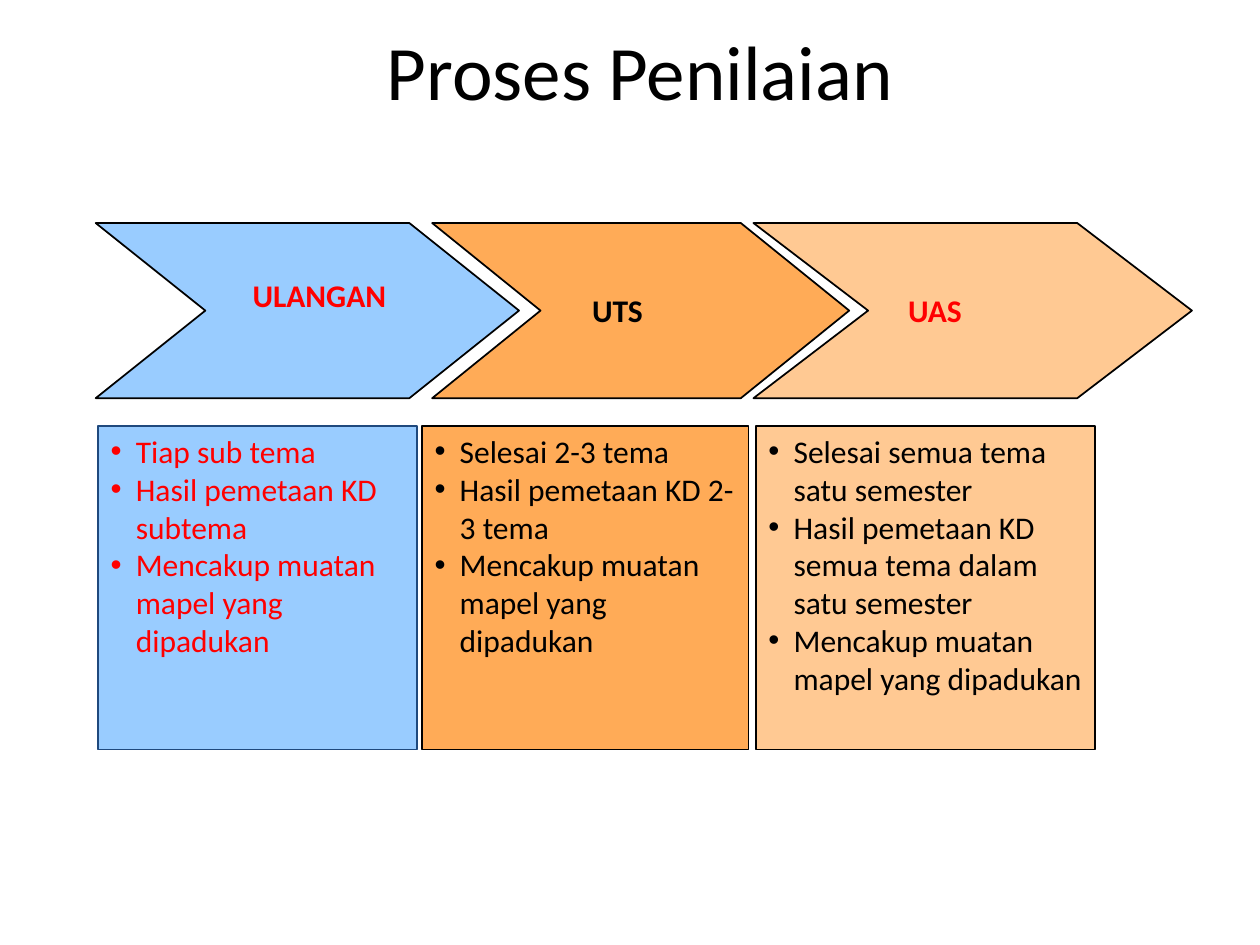
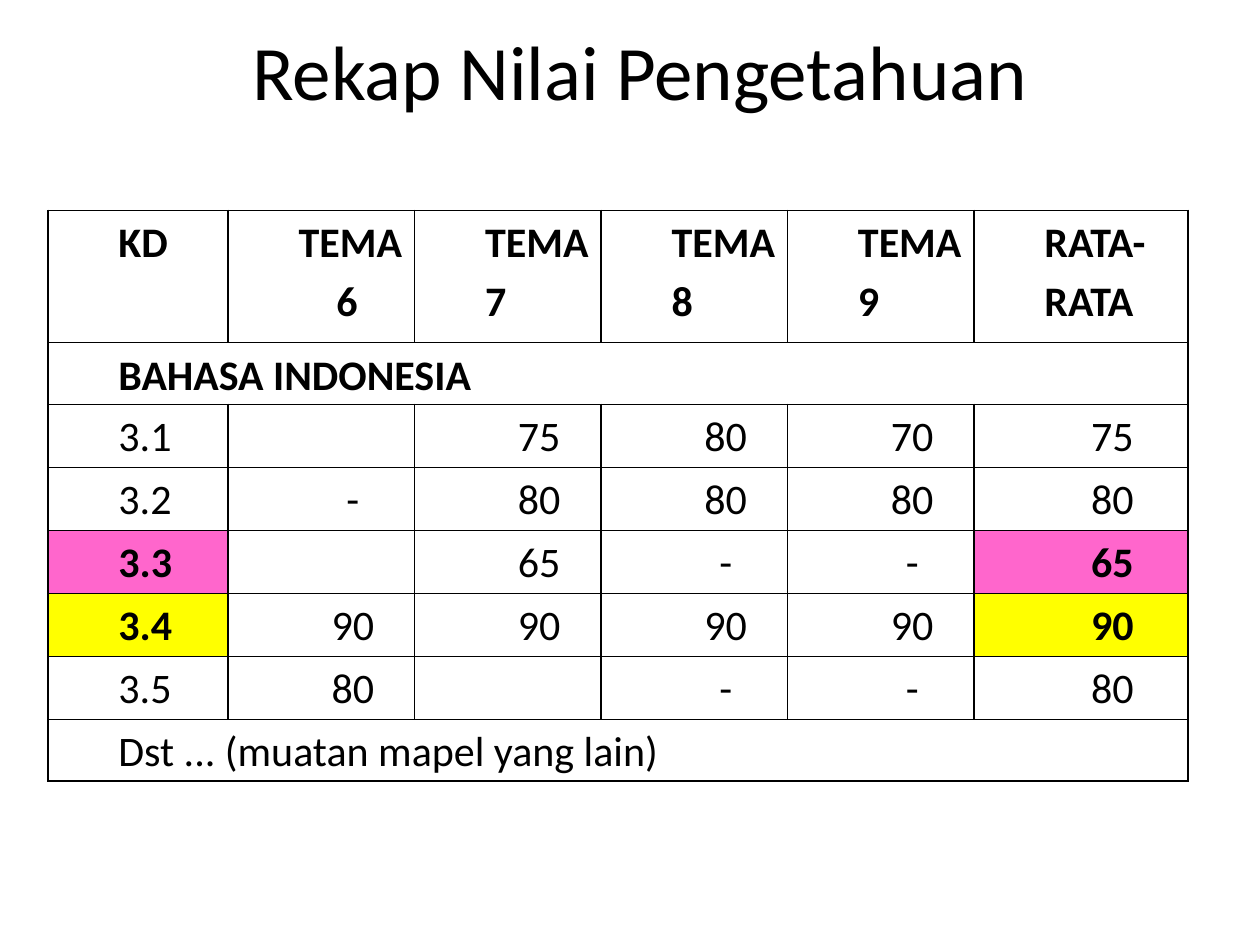
from dataclasses import dataclass
from typing import Any

from lxml.etree import SubElement
from pptx import Presentation
from pptx.dml.color import RGBColor
from pptx.enum.shapes import MSO_SHAPE as Preset
from pptx.enum.text import MSO_ANCHOR as Anchor, PP_ALIGN as Align
from pptx.oxml.ns import qn
from pptx.util import Inches, Pt

# Slide size and grid: 100 columns by 75 rows
WIDTH, HEIGHT = Inches(10), Inches(7.5)
GRID_COLUMNS, GRID_ROWS = 100, 75

# Colours
BLACK = RGBColor(0x00, 0x00, 0x00)
RED = RGBColor(0xFF, 0x00, 0x00)
NAVY = RGBColor(0x1F, 0x49, 0x7D)
BLUE = RGBColor(0x99, 0xCC, 0xFF)
ORANGE = RGBColor(0xFF, 0xAB, 0x57)
PEACH = RGBColor(0xFF, 0xC9, 0x93)
PINK = RGBColor(0xFF, 0x66, 0xCC)
YELLOW = RGBColor(0xFF, 0xFF, 0x00)

# Text formats
TITLE_FONT = {"name": "Calibri", "size": Pt(44), "bold": False}
BODY_FONT = {"name": "Calibri", "size": Pt(18), "bold": False}
LABEL_FONT = {**BODY_FONT, "bold": True}
CELL_FONT = {"name": "Calibri", "size": Pt(24), "bold": False}
HEAD_FONT = {**CELL_FONT, "bold": True}


def columns(count: float) -> int:
    return round(WIDTH * count / GRID_COLUMNS)


def rows(count: float) -> int:
    return round(HEIGHT * count / GRID_ROWS)


@dataclass(frozen=True)
class Area:
    """A place on the grid, in columns and rows."""
    left: float
    top: float
    width: float
    height: float

    def place(self) -> tuple[int, int, int, int]:
        return (columns(self.left), rows(self.top),
                columns(self.width), rows(self.height))


@dataclass(frozen=True)
class Stage:
    label: str
    label_area: Area
    label_color: RGBColor
    label_align: Align
    chevron_left: float
    chevron_width: float
    point: float  # depth of the arrow point, in columns
    panel_left: float
    panel_width: float
    fill: RGBColor
    outline: RGBColor
    text_color: RGBColor
    notes: tuple[str, ...]


CHEVRON_TOP, CHEVRON_HEIGHT = 17.7, 13.9
PANEL_TOP, PANEL_HEIGHT = 33.8, 25.7
COVERAGE = "Mencakup muatan mapel yang dipadukan"

STAGES = (
    Stage("ULANGAN", Area(17.7, 21.4, 15.3, 7.1), RED, Align.CENTER,
          7.6, 33.6, 8.7, 7.8, 25.3, BLUE, NAVY, RED,
          ("Tiap sub tema", "Hasil pemetaan KD subtema", COVERAGE)),
    Stage("UTS", Area(46, 22.6, 9.5, 4), BLACK, Align.LEFT,
          34.3, 33.1, 8.6, 33.5, 25.9, ORANGE, BLACK, BLACK,
          ("Selesai 2-3 tema", "Hasil pemetaan KD 2-3 tema", COVERAGE)),
    Stage("UAS", Area(71.1, 22.6, 7.3, 4), RED, Align.LEFT,
          59.8, 34.8, 9.1, 60, 26.9, PEACH, BLACK, BLACK,
          ("Selesai semua tema satu semester",
           "Hasil pemetaan KD semua tema dalam satu semester", COVERAGE)),
)

# Score table
TABLE_AREA = Area(3.8, 16.7, 90.5, 45.4)
COLUMN_WIDTHS = (14.3, *[14.8] * 4, 17)
ROW_HEIGHTS = (10.5, 4.9, *[5] * 5, 4.9)
CELL_INDENT, CELL_MARGIN = 5, 0.6
THEME_SIX_INDENT = 8
SCORES = (
    ("KD", "TEMA\n6", "TEMA 7", "TEMA 8", "TEMA 9", "RATA-RATA"),
    ("BAHASA INDONESIA",),
    ("3.1", "", "75", "80", "70", "75"),
    ("3.2", "-", "80", "80", "80", "80"),
    ("3.3", "", "65", "-", "-", "65"),
    ("3.4", "90", "90", "90", "90", "90"),
    ("3.5", "80", "", "-", "-", "80"),
    ("Dst ... (muatan mapel yang lain)",),
)
HEADING_ROWS = (0, 1)
ROW_HIGHLIGHTS = {4: PINK, 5: YELLOW}


def add_run(paragraph: Any, text: str, font: dict, color: RGBColor = BLACK) -> None:
    run = paragraph.add_run()
    run.text = text
    for name, value in font.items():
        setattr(run.font, name, value)
    run.font.color.rgb = color


def set_indent(paragraph: Any, left: float, first: float = 0) -> None:
    properties = paragraph._p.get_or_add_pPr()
    properties.set("marL", str(columns(left)))
    properties.set("indent", str(columns(first)))


def add_bullet(paragraph: Any) -> None:
    set_indent(paragraph, 2, -2)
    properties = paragraph._p.get_or_add_pPr()
    SubElement(properties, qn("a:buFont"), typeface="Arial")
    SubElement(properties, qn("a:buChar"), char="•")


def add_label(slide: Any, area: Area, text: str, font: dict, color: RGBColor,
              align: Align, anchor: Anchor = Anchor.TOP, wrap: bool = False) -> None:
    frame = slide.shapes.add_textbox(*area.place()).text_frame
    frame.word_wrap = wrap
    frame.vertical_anchor = anchor
    paragraph = frame.paragraphs[0]
    paragraph.alignment = align
    add_run(paragraph, text, font, color)


def add_titled_slide(presentation: Any, title: str) -> Any:
    slide = presentation.slides.add_slide(presentation.slide_layouts[6])
    add_label(slide, Area(8.3, 1.4, 85, 8.3), title, TITLE_FONT, BLACK,
              Align.CENTER, Anchor.MIDDLE, wrap=True)
    return slide


def add_block(slide: Any, preset: Preset, area: Area,
              fill: RGBColor, outline: RGBColor) -> Any:
    shape = slide.shapes.add_shape(preset, *area.place())
    shape.shadow.inherit = False
    shape.fill.solid()
    shape.fill.fore_color.rgb = fill
    shape.line.color.rgb = outline
    shape.line.width = Pt(1)
    return shape


def add_panel(slide: Any, stage: Stage) -> None:
    area = Area(stage.panel_left, PANEL_TOP, stage.panel_width, PANEL_HEIGHT)
    frame = add_block(slide, Preset.RECTANGLE, area,
                      stage.fill, stage.outline).text_frame
    frame.word_wrap = True
    frame.vertical_anchor = Anchor.TOP
    for index, note in enumerate(stage.notes):
        paragraph = frame.add_paragraph() if index else frame.paragraphs[0]
        paragraph.alignment = Align.LEFT
        add_bullet(paragraph)
        add_run(paragraph, note, BODY_FONT, stage.text_color)


def add_chevron(slide: Any, stage: Stage) -> None:
    area = Area(stage.chevron_left, CHEVRON_TOP, stage.chevron_width, CHEVRON_HEIGHT)
    chevron = add_block(slide, Preset.CHEVRON, area, stage.fill, BLACK)
    chevron.adjustments[0] = stage.point / CHEVRON_HEIGHT


def add_borders(cell: Any) -> None:
    properties = cell._tc.get_or_add_tcPr()
    for side in ("lnL", "lnR", "lnT", "lnB"):
        line = SubElement(properties, qn(f"a:{side}"), w=str(Pt(1)))
        fill = SubElement(line, qn("a:solidFill"))
        SubElement(fill, qn("a:srgbClr"), val=str(BLACK))


def style_cell(cell: Any, fill: RGBColor | None) -> None:
    margins = {"margin_left": columns(CELL_MARGIN), "margin_right": columns(CELL_MARGIN),
               "margin_top": 0, "margin_bottom": 0}
    for name, value in margins.items():
        setattr(cell, name, value)
    add_borders(cell)
    if fill is None:
        cell.fill.background()
    else:
        cell.fill.solid()
        cell.fill.fore_color.rgb = fill


def write_cell(cell: Any, text: str, font: dict, align: Align) -> None:
    for index, line in enumerate(text.split("\n")):
        frame = cell.text_frame
        paragraph = frame.add_paragraph() if index else frame.paragraphs[0]
        set_indent(paragraph, THEME_SIX_INDENT if index else CELL_INDENT)
        paragraph.alignment = align
        paragraph.line_spacing = 1.15
        add_run(paragraph, line, font)


def add_score_table(slide: Any) -> None:
    table = slide.shapes.add_table(len(ROW_HEIGHTS), len(COLUMN_WIDTHS),
                                   *TABLE_AREA.place()).table
    table.first_row = table.horz_banding = False
    for column, width in zip(table.columns, COLUMN_WIDTHS):
        column.width = columns(width)
    for row, height in zip(table.rows, ROW_HEIGHTS):
        row.height = rows(height)

    last = len(COLUMN_WIDTHS) - 1
    for row_index, texts in enumerate(SCORES):
        heading = row_index in HEADING_ROWS
        for column_index in range(last + 1):
            edge = column_index in (0, last)
            highlight = ROW_HIGHLIGHTS.get(row_index) if edge else None
            cell = table.cell(row_index, column_index)
            style_cell(cell, highlight)
            if column_index < len(texts) and texts[column_index]:
                font = HEAD_FONT if heading or highlight else CELL_FONT
                align = Align.LEFT if heading or column_index == 0 else Align.CENTER
                write_cell(cell, texts[column_index], font, align)
        if len(texts) == 1:
            table.cell(row_index, 0).merge(table.cell(row_index, last))


def main() -> None:
    presentation = Presentation()
    presentation.slide_width, presentation.slide_height = WIDTH, HEIGHT

    # Assessment process
    slide = add_titled_slide(presentation, "Proses Penilaian")
    for stage in STAGES:
        add_panel(slide, stage)
    for stage in STAGES:
        add_chevron(slide, stage)
    for stage in STAGES:
        add_label(slide, stage.label_area, stage.label, LABEL_FONT,
                  stage.label_color, stage.label_align)

    # Knowledge scores
    slide = add_titled_slide(presentation, "Rekap Nilai Pengetahuan")
    add_score_table(slide)

    presentation.save("out.pptx")


if __name__ == "__main__":
    main()
